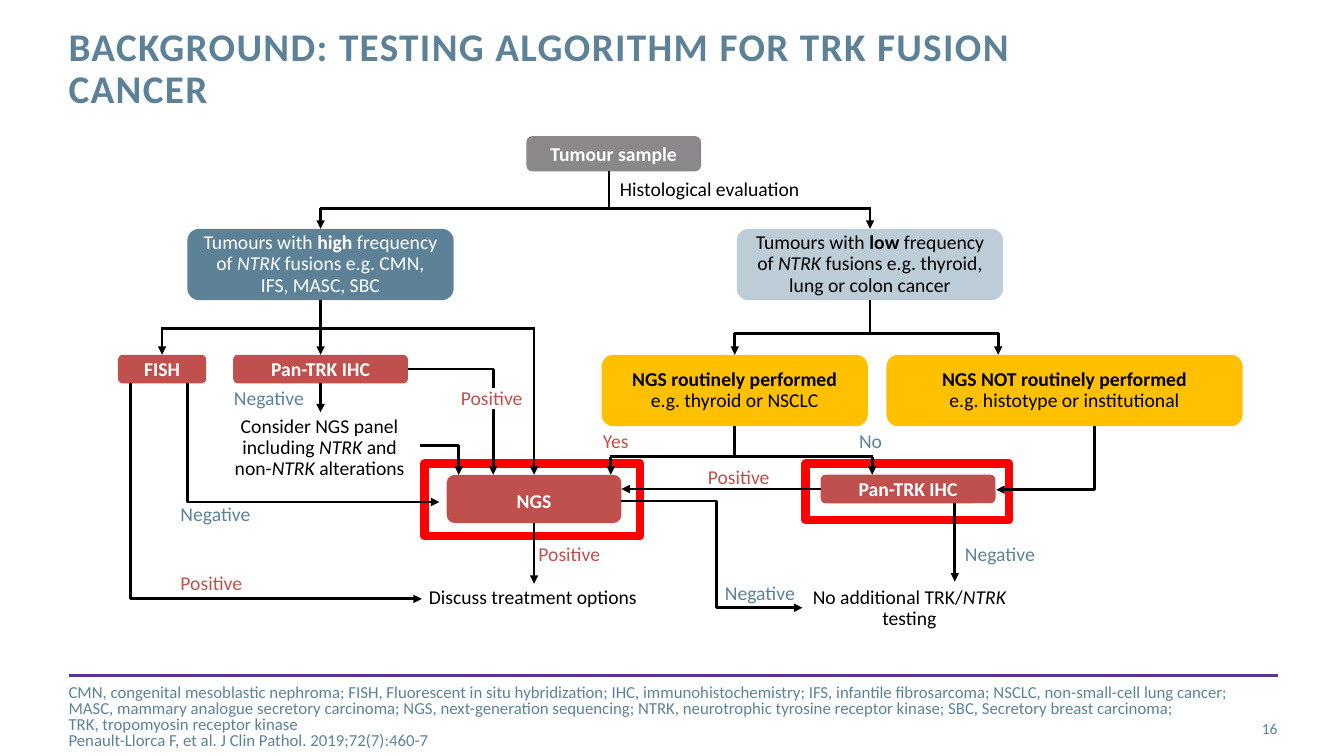
"""Builds a slide with the testing algorithm for TRK fusion cancer."""
from copy import deepcopy

from lxml import etree
from pptx import Presentation
from pptx.dml.color import RGBColor
from pptx.enum.shapes import MSO_CONNECTOR, MSO_SHAPE
from pptx.enum.text import MSO_ANCHOR, MSO_AUTO_SIZE, PP_ALIGN
from pptx.oxml.ns import qn
from pptx.util import Inches, Pt

STRAIGHT = MSO_CONNECTOR.STRAIGHT
RECTANGLE, ROUNDED = MSO_SHAPE.RECTANGLE, MSO_SHAPE.ROUNDED_RECTANGLE
TOP, MIDDLE = MSO_ANCHOR.TOP, MSO_ANCHOR.MIDDLE
LEFT, CENTER, RIGHT = PP_ALIGN.LEFT, PP_ALIGN.CENTER, PP_ALIGN.RIGHT
FIT_SHAPE = MSO_AUTO_SIZE.SHAPE_TO_FIT_TEXT
COLORS = {"slate": "5D8298", "pale": "BDCDD7", "amber": "FFC000", "brick": "C0504D",
          "grey": "8B878B", "red": "FF0000", "violet": "56378D", "black": "000000",
          "white": "FFFFFF"}
COLORS = {name: RGBColor.from_string(value) for name, value in COLORS.items()}

deck = Presentation()
deck.slide_width, deck.slide_height = Inches(13.33), Inches(7.5)
page = deck.slides.add_slide(deck.slide_layouts[6])
CELL = deck.slide_height / 90


def cells(*lengths):
    return [round(length * CELL) for length in lengths]


def write(para, runs, color, size=14, align=LEFT, spacing=0.9):
    para.alignment, para.line_spacing = align, spacing
    for text, style in runs:
        for number, line in enumerate(text.split("\n")):
            if number:
                para.add_line_break()
                para._p[-1].append(deepcopy(span._r.rPr))
            if line:
                span = para.add_run()
                span.text = line
                font = span.font
                font.name, font.size = "Calibri", Pt(size)
                font.bold, font.italic = style == "bold", style == "italic"
                font.color.rgb = COLORS[color]


for frame in [(50.52, 55.2, 25.68, 8.64), (95.88, 55.2, 24.24, 6.72)]:
    box = page.shapes.add_shape(RECTANGLE, *cells(*frame))
    box.shadow.inherit = False
    box.fill.background()
    box.line.color.rgb, box.line.width = COLORS["red"], Pt(6)

WIDE, TALL, SMALL, LOW = 31.7, 8.5, 20.8, 3.4
ROW_SAMPLE, ROW_GROUP, ROW_TEST, ROW_NGS = 16.2, 27.24, 42.24, 56.52
nodes = [
    ("sample", 62.64, ROW_SAMPLE, SMALL, 4.2, "grey", "white", 0.96, [("Tumour sample", "bold")]),
    ("high", 22.3, ROW_GROUP, WIDE, TALL, "slate", "white", 0.6,
     [("Tumours with ", ""), ("high", "bold"), (" frequency\nof ", ""), ("NTRK", "italic"),
      (" fusions e.g. CMN,\nIFS, MASC, SBC", "")]),
    ("low", 87.7, ROW_GROUP, WIDE, TALL, "pale", "black", 0.6,
     [("Tumours with ", ""), ("low", "bold"), (" frequency\nof ", ""), ("NTRK", "italic"),
      (" fusions e.g. thyroid,\nlung or colon cancer", "")]),
    ("fish", 14.04, ROW_TEST, 10.5, LOW, "brick", "white", 0.96, [("FISH", "bold")]),
    ("first ihc", 27.75, ROW_TEST, SMALL, LOW, "brick", "white", 0.96, [("Pan-TRK IHC", "bold")]),
    ("routine", 71.6, ROW_TEST, WIDE, TALL, "amber", "black", 0.6,
     [("NGS routinely performed\n", "bold"), ("e.g. thyroid or NSCLC", "")]),
    ("not routine", 105.5, ROW_TEST, 42.4, TALL, "amber", "black", 0.6,
     [("NGS NOT routinely performed\n", "bold"), ("e.g. histotype or institutional", "")]),
    ("ngs", 53.16, ROW_NGS, SMALL, 5.76, "brick", "white", 1.44, [("NGS", "bold")]),
    ("second ihc", 97.68, ROW_NGS, SMALL, LOW, "brick", "white", 0.96, [("Pan-TRK IHC", "bold")]),
]
boxes = {}
for name, left, top, width, height, fill, ink, inset, runs in nodes:
    box = page.shapes.add_shape(ROUNDED, *cells(left, top, width, height))
    box.shadow.inherit = False
    box.fill.solid()
    box.fill.fore_color.rgb = COLORS[fill]
    box.line.fill.background()
    frame = box.text_frame
    frame.word_wrap, frame.vertical_anchor = True, MIDDLE
    frame.margin_left, frame.margin_right, frame.margin_top, frame.margin_bottom = cells(
        1.2, 1.2, inset, 0.6)
    write(frame.paragraphs[0], runs, ink, align=CENTER)
    boxes[name] = box

HIGH_X, LOW_X, FISH_X, ROUTINE_X, NGS_X = 38.15, 103.55, 19.29, 87.45, 63.56
NOT_X, YES_X, NO_X, POSITIVE_X = 118.8, 72.7, 103.8, 58.7
RAIL_TOP, RAIL_LEFT, RAIL_RIGHT, RAIL_LOWER, IHC_Y = 24.8, 39.1, 39.7, 54.36, 43.94
lines = [
    ((72.48, 20.4), (72.48, RAIL_TOP), False, None, None),
    ((HIGH_X - 0.1, RAIL_TOP), (LOW_X + 0.1, RAIL_TOP), False, None, None),
    ((HIGH_X, RAIL_TOP), (HIGH_X, ROW_GROUP), True, None, ("high", 0)),
    ((LOW_X, RAIL_TOP), (LOW_X, ROW_GROUP), True, None, ("low", 0)),
    ((HIGH_X, 35.74), (HIGH_X, ROW_TEST), True, ("high", 2), ("first ihc", 0)),
    ((FISH_X - 0.1, RAIL_LEFT), (NGS_X + 0.1, RAIL_LEFT), False, None, None),
    ((FISH_X, RAIL_LEFT), (FISH_X, ROW_TEST), True, None, ("fish", 0)),
    ((NGS_X, RAIL_LEFT), (NGS_X, ROW_NGS), True, None, ("ngs", 0)),
    ((LOW_X, 35.74), (LOW_X, RAIL_RIGHT), False, ("low", 2), None),
    ((ROUTINE_X - 0.1, RAIL_RIGHT), (NOT_X + 0.1, RAIL_RIGHT), False, None, None),
    ((ROUTINE_X, RAIL_RIGHT), (ROUTINE_X, ROW_TEST), True, None, ("routine", 0)),
    ((NOT_X, RAIL_RIGHT), (NOT_X, ROW_TEST), True, None, None),
    ((HIGH_X, 45.64), (HIGH_X, 49.1), True, ("first ihc", 2), None),
    ((48.55, IHC_Y), (POSITIVE_X + 0.1, IHC_Y), False, ("first ihc", 3), None),
    ((POSITIVE_X, IHC_Y), (POSITIVE_X, ROW_NGS), True, None, None),
    ((ROUTINE_X, 50.74), (ROUTINE_X, RAIL_LOWER), False, ("routine", 2), None),
    ((YES_X - 0.1, RAIL_LOWER), (NO_X + 0.1, RAIL_LOWER), False, None, None),
    ((YES_X, RAIL_LOWER), (YES_X, ROW_NGS), True, None, None),
    ((NO_X, RAIL_LOWER), (NO_X, ROW_NGS), True, None, None),
    ((97.68, 58.22), (73.96, 58.22), True, ("second ihc", 1), None),
    ((NGS_X, 62.28), (NGS_X, 69.5), True, ("ngs", 2), None),
    ((113.64, 59.92), (113.64, 69.24), True, None, None),
    ((8.16, 80.4), (152.16, 80.4), False, None, None),
]
strokes = []
for start, end, arrow, begin_at, end_at in lines:
    line = page.shapes.add_connector(STRAIGHT, *cells(*start, *end))
    if begin_at:
        line.begin_connect(boxes[begin_at[0]], begin_at[1])
    if end_at:
        line.end_connect(boxes[end_at[0]], end_at[1])
    strokes.append((line, arrow, "black"))
strokes[-1] = (line, False, "violet")

elbows = [
    [(15.5, 45.64), (15.5, 71.3), (50.2, 71.3)],
    [(22.3, 45.64), (22.3, 59.76), (52.3, 59.76)],
    [(50.04, 53.04), (54.6, 53.04), (54.6, ROW_NGS)],
    [(73.96, 59.64), (85.3, 59.64), (85.3, 72.36), (95.5, 72.36)],
    [(130.3, 50.74), (130.3, 58.3), (118.56, 58.3)],
]
for elbow in elbows:
    first, *others = [cells(*point) for point in elbow]
    builder = page.shapes.build_freeform(*first)
    builder.add_line_segments(others, close=False)
    route = builder.convert_to_shape()
    route.fill.background()
    strokes.append((route, True, "black"))

for stroke, arrow, color in strokes:
    stroke.line.color.rgb, stroke.line.width = COLORS[color], Pt(2)
    etree.SubElement(stroke._element.spPr, qn("a:effectLst"))
    if arrow:
        etree.SubElement(stroke.line._get_or_add_ln(), qn("a:tailEnd"), type="triangle")

POSITIVE, NEGATIVE = [("Positive", "")], [("Negative", "")]
labels = [
    (73.68, 21.36, 21.6, 2.5, "black", CENTER, [("Histological evaluation", "")]),
    (27.84, 46.2, 8.4, 2.5, "slate", LEFT, NEGATIVE),
    (21.48, 60.12, 8.4, 2.5, "slate", LEFT, NEGATIVE),
    (86.28, 69.48, 8.4, 2.5, "slate", LEFT, NEGATIVE),
    (114.84, 64.8, 8.4, 2.5, "slate", LEFT, NEGATIVE),
    (102.24, 51.36, 2.76, 2.5, "slate", LEFT, [("No", "")]),
    (71.76, 51.36, 3.12, 2.5, "brick", LEFT, [("Yes", "")]),
    (84.24, 55.68, 7.44, 2.5, "brick", LEFT, POSITIVE),
    (64.08, 64.8, 7.44, 2.5, "brick", LEFT, POSITIVE),
    (21.48, 68.28, 7.44, 2.5, "brick", LEFT, POSITIVE),
    (54.84, 46.2, 7.44, 2.5, "brick", LEFT, POSITIVE),
    (27.84, 49.56, 20.4, 7.68, "black", CENTER,
     [("Consider NGS panel\nincluding ", ""), ("NTRK ", "italic"), ("and\nnon-", ""),
      ("NTRK ", "italic"), ("alterations", "")]),
    (50.88, 69.96, 25.08, 2.5, "black", CENTER, [("Discuss treatment options", "")]),
    (96.6, 69.96, 23.28, 5.04, "black", CENTER,
     [("No additional TRK/", ""), ("NTRK\n", "italic"), ("testing", "")]),
]
footnotes = [
    "CMN, congenital mesoblastic nephroma; FISH, Fluorescent in situ hybridization; "
    "IHC, immunohistochemistry; IFS, infantile fibrosarcoma; NSCLC, non-small-cell lung cancer; "
    "MASC, mammary analogue secretory carcinoma; NGS, next-generation sequencing; "
    "NTRK, neurotrophic tyrosine receptor kinase; SBC, Secretory breast carcinoma;\n"
    "TRK, tropomyosin receptor kinase",
    "Penault-Llorca F, et al. J Clin Pathol. 2019;72(7):460-7",
]
heading = [("BACKGROUND: TESTING ALGORITHM FOR TRK FUSION CANCER", "bold")]
texts = [(*label[:4], TOP, False, label[4], 14, label[5], 0.9, [label[6]]) for label in labels]
texts += [
    (141.72, 84.36, 10.32, 4.8, MIDDLE, True, "slate", 11, RIGHT, 1, [[("16", "")]]),
    (8.16, 83.04, 140.88, 4.8, MIDDLE, True, "slate", 12, LEFT, 0.8,
     [[(note, "")] for note in footnotes]),
    (8.16, 3.24, 114.72, 10.56, TOP, True, "slate", 28, LEFT, Pt(30), [heading]),
]
for left, top, width, height, anchor, wrap, color, size, align, spacing, paras in texts:
    box = page.shapes.add_textbox(*cells(left, top, width, height))
    frame = box.text_frame
    frame.word_wrap, frame.vertical_anchor = wrap, anchor
    frame.margin_left = frame.margin_right = frame.margin_top = frame.margin_bottom = 0
    if not wrap:
        frame.auto_size = FIT_SHAPE
    if paras[0] is POSITIVE and left == 54.84:
        box.fill.solid()
        box.fill.fore_color.rgb = COLORS["white"]
    for number, runs in enumerate(paras):
        para = frame.add_paragraph() if number else frame.paragraphs[0]
        write(para, runs, color, size, align, spacing)
frame.paragraphs[0].runs[0].font._element.set("spc", "100")

deck.save("out.pptx")
